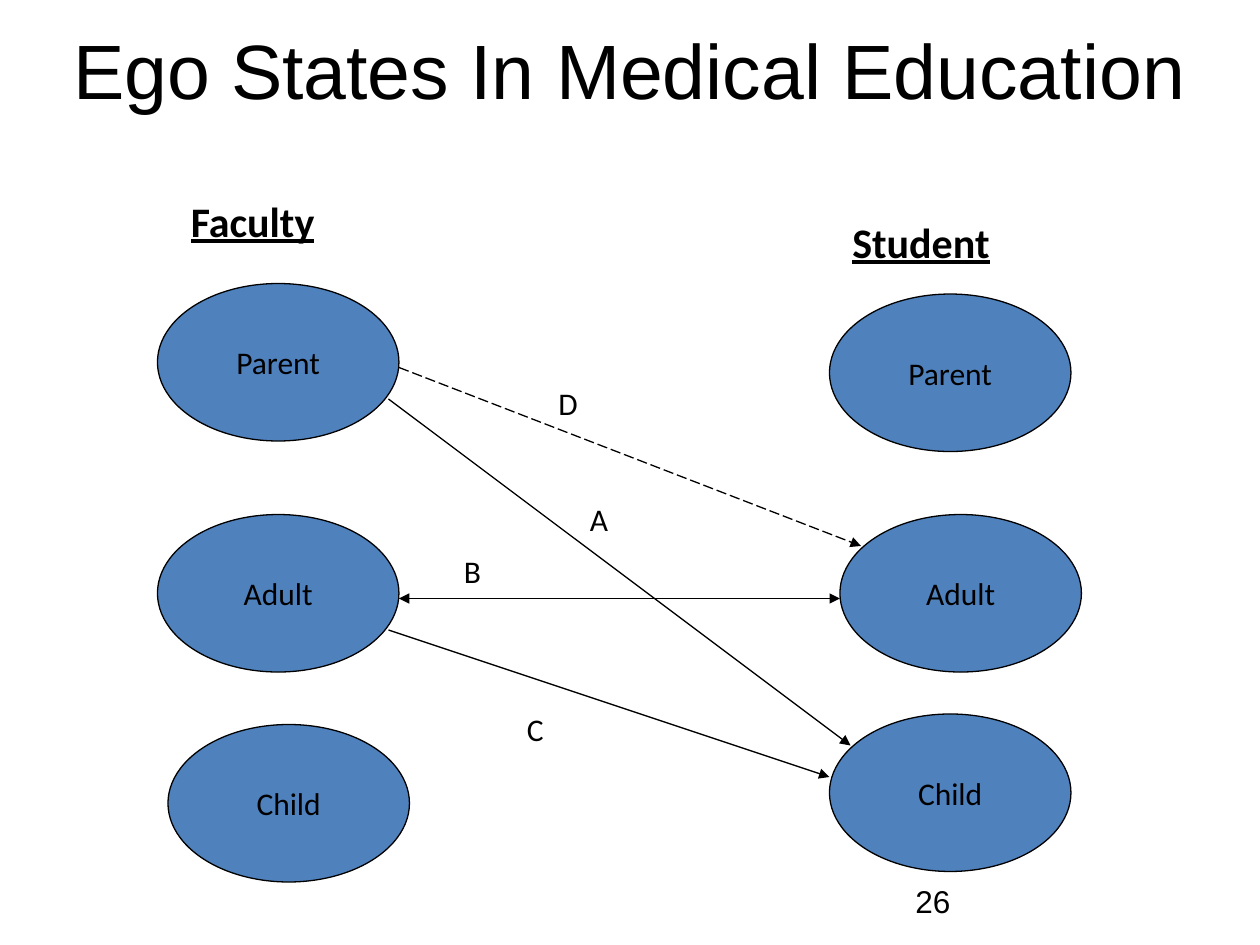
import pptx
import pptx.util
import pptx.dml.color
import pptx.enum.dml
import pptx.enum.shapes
import pptx.enum.text
import pptx.oxml
import pptx.oxml.ns

HUES = {"ink": "000000", "oval": "4F81BD"}
ALIGN = pptx.enum.text.PP_ALIGN
ANCHOR = pptx.enum.text.MSO_ANCHOR


class Board:
    """Style and current slide, on a grid of 120 columns by 90 rows."""

    def __init__(self, deck):
        self.cell = deck.slide_width / 120
        self.slide = deck.slides.add_slide(deck.slide_layouts[5])
        self.shapes = self.slide.shapes

    def grid(self, *cells):
        return [round(n * self.cell) for n in cells]

    def hue(self, name):
        return pptx.dml.color.RGBColor.from_string(HUES[name])

    def edge(self, line):
        line.color.rgb = self.hue("ink")
        line.width = pptx.util.Pt(0.75)

    def letter(self, frame, text, size=18, face="Calibri", strong=False, align=ALIGN.LEFT):
        para = frame.paragraphs[0]
        para.alignment = align
        run = para.add_run()
        run.text = text
        font = run.font
        font.size, font.name = pptx.util.Pt(size), face
        font.bold = font.underline = strong
        font.color.rgb = self.hue("ink")

    def title(self, text):
        shape = self.shapes.title
        shape.left, shape.top, shape.width, shape.height = self.grid(0, 0, 120, 13)
        frame = shape.text_frame
        frame.auto_size = pptx.enum.text.MSO_AUTO_SIZE.NONE
        frame.vertical_anchor = ANCHOR.MIDDLE
        self.letter(frame, text, 44, "Arial", align=ALIGN.CENTER)

    def label(self, text, col, row, wide=5, high=4.8, **style):
        frame = self.shapes.add_textbox(*self.grid(col, row, wide, high)).text_frame
        frame.word_wrap = True
        self.letter(frame, text, **style)

    def oval(self, text, col, row):
        kind = pptx.enum.shapes.MSO_SHAPE.OVAL
        shape = self.shapes.add_shape(kind, *self.grid(col, row, 23, 15))
        shape.shadow.inherit = False
        shape.fill.solid()
        shape.fill.fore_color.rgb = self.hue("oval")
        self.edge(shape.line)
        frame = shape.text_frame
        frame.word_wrap = False
        frame.vertical_anchor = ANCHOR.MIDDLE
        self.letter(frame, text, align=ALIGN.CENTER)

    def arrow(self, start, end, ends=("tailEnd",), dash=False):
        kind = pptx.enum.shapes.MSO_CONNECTOR.STRAIGHT
        link = self.shapes.add_connector(kind, *self.grid(*start, *end))
        self.edge(link.line)
        if dash:
            link.line.dash_style = pptx.enum.dml.MSO_LINE.LONG_DASH
        props = link._element.spPr
        stroke = props.find(pptx.oxml.ns.qn("a:ln"))
        space = pptx.oxml.ns.nsdecls("a")
        for tag in ends:
            stroke.append(pptx.oxml.parse_xml(f"<a:{tag} {space} type='triangle'/>"))
        props.append(pptx.oxml.parse_xml(f"<a:effectLst {space}/>"))


def main():
    deck = pptx.Presentation()
    deck.slide_width, deck.slide_height = pptx.util.Inches(10), pptx.util.Inches(7.5)
    board = Board(deck)
    board.title("Ego States In Medical Education")
    board.label("26", 86, 83.4, 28, face="Arial")

    states = ("Parent", "Adult", "Child")
    sides = (
        ("Faculty", (17, 18), ((15, 27), (15, 49), (16, 69))),
        ("Student", (80, 20), ((79, 28), (80, 49), (79, 68))),
    )
    for role, head, spots in sides:
        board.label(role, *head, 23, 6, size=24, strong=True)
        for state, spot in zip(states, spots):
            board.oval(state, *spot)

    board.arrow((37, 38), (81, 71))
    board.arrow((38, 57), (80, 57), ends=("headEnd", "tailEnd"))
    board.arrow((37, 60), (79, 74))
    board.arrow((38, 35), (82, 52), dash=True)
    for name, col, row in (("A", 55, 47), ("B", 43, 52), ("C", 49, 67), ("D", 52, 36)):
        board.label(name, col, row)

    deck.save("out.pptx")


if __name__ == "__main__":
    main()
